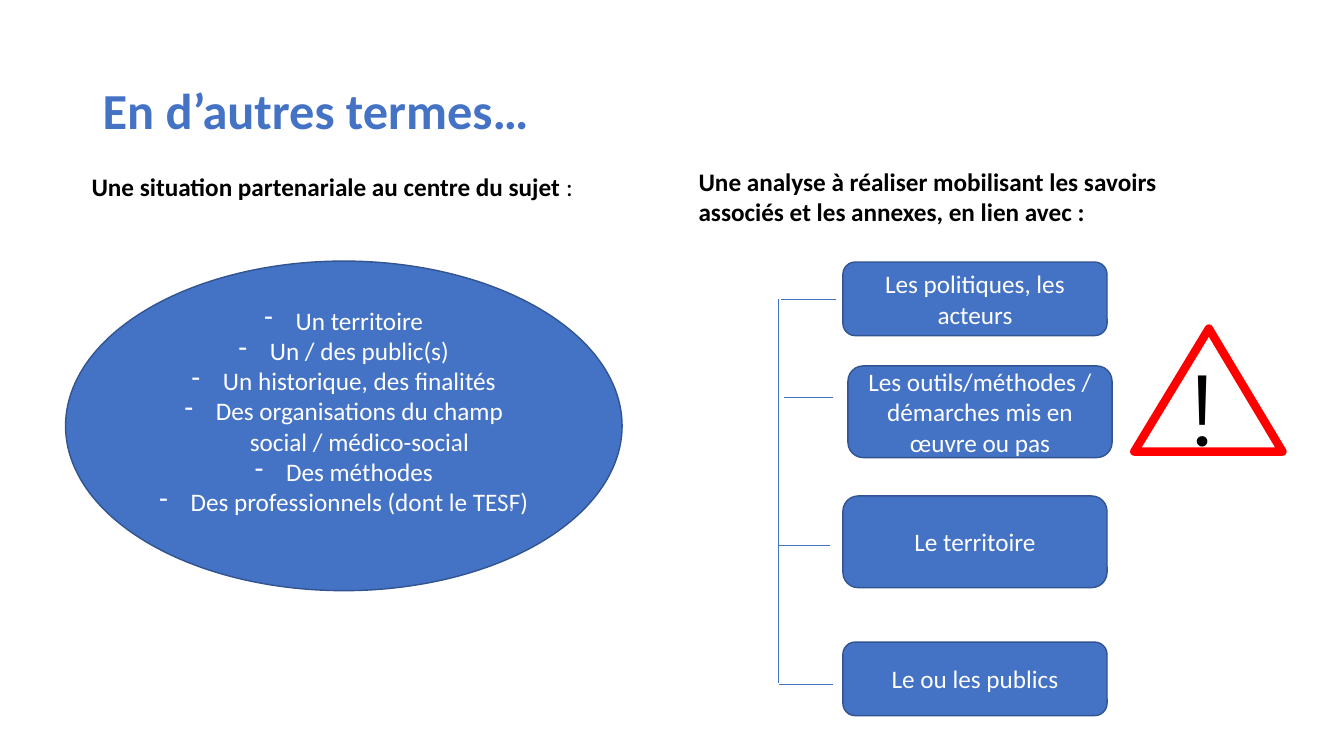
import pptx
import pptx.util
import pptx.dml.color
import pptx.enum.shapes
import pptx.enum.text
import pptx.oxml.ns
from lxml import etree

BLUE, EDGE, WHITE, BLACK, RED = "4472C4", "325491", "FFFFFF", "000000", "FF0000"
TITLE = "En d’autres termes…"
LEFT = [("Une situation partenariale au centre du sujet ", True), (":", False)]
RIGHT = [("Une analyse à réaliser mobilisant les savoirs associés et les annexes, en lien avec :", True)]
ITEMS = [
    "Un territoire",
    "Un / des public(s)",
    "Un historique, des finalités",
    "Des organisations du champ social / médico-social",
    "Des méthodes",
    "Des professionnels (dont le TESF)",
]
BOXES = [
    ("Les politiques, les acteurs", 8.36, 2.6, 0.73),
    ("Les outils/méthodes / démarches mis en œuvre ou pas", 8.41, 3.63, 0.91),
    ("Le territoire", 8.36, 4.92, 0.91),
    ("Le ou les publics", 8.36, 6.37, 0.73),
]
LINES = [
    (8.29, 2.97, 7.75, 2.97),
    (7.72, 2.97, 7.72, 6.78),
    (7.73, 6.79, 8.26, 6.79),
    (7.72, 5.41, 8.23, 5.41),
    (7.78, 3.94, 8.26, 3.94),
    (4.46, 4.37, 5.37, 5.38),
]
SIGN = [(11.25, 4.48), (11.99, 3.26), (12.72, 4.48)]

Inches, Pt = pptx.util.Inches, pptx.util.Pt
KIND = pptx.enum.shapes.MSO_SHAPE
MIDDLE = pptx.enum.text.MSO_ANCHOR.MIDDLE
CENTER = pptx.enum.text.PP_ALIGN.CENTER
qn = pptx.oxml.ns.qn

deck = pptx.Presentation()
deck.slide_width, deck.slide_height = Inches(13.33), Inches(7.5)
slide = deck.slides.add_slide(deck.slide_layouts[6])
shapes = slide.shapes


def color(text):
    return pptx.dml.color.RGBColor.from_string(text)


def style(para, size, tint, bold=None, face="Calibri"):
    font = para.font
    font.name, font.size, font.bold = face, Pt(size), bold
    font.color.rgb = color(tint)


def stroke(line, tint, width):
    line.color.rgb = color(tint)
    line.width = Pt(width)


def label(place):
    frame = shapes.add_textbox(*map(Inches, place)).text_frame
    frame.word_wrap = True
    return frame


def block(kind, place, texts):
    shape = shapes.add_shape(kind, *map(Inches, place))
    shape.shadow.inherit = False
    shape.fill.solid()
    shape.fill.fore_color.rgb = color(BLUE)
    stroke(shape.line, EDGE, 1)
    frame = shape.text_frame
    frame.word_wrap = True
    frame.vertical_anchor = MIDDLE
    frame.text = "\n".join(texts)
    for para in frame.paragraphs:
        para.alignment = CENTER
        style(para, 18, WHITE)
    return frame


def bullet(para):
    props = para._p.get_or_add_pPr()
    props.set("marL", str(Inches(0.31)))
    props.set("indent", str(-Inches(0.31)))
    mark = etree.Element(qn("a:buChar"), char="-")
    props.insert_element_before(mark, "a:tabLst", "a:defRPr", "a:extLst")


head = label((0.92, 0.4, 11.5, 1.45))
head.vertical_anchor = MIDDLE
head.text = TITLE
head.paragraphs[0].line_spacing = 0.9
style(head.paragraphs[0], 36, BLUE, True)

oval = block(KIND.OVAL, (0.65, 2.59, 5.52, 3.27), ITEMS)
oval.margin_bottom = Inches(0.35)
for para in oval.paragraphs:
    bullet(para)

for text, x, y, high in BOXES:
    block(KIND.ROUNDED_RECTANGLE, (x, y, 2.62, high), [text])

for ends in LINES:
    link = shapes.add_connector(pptx.enum.shapes.MSO_CONNECTOR.STRAIGHT, *map(Inches, ends))
    stroke(link.line, BLUE, 0.5)
    etree.SubElement(link._element.spPr, qn("a:effectLst"))

for place, parts in [((6.83, 1.6, 5.59, 0.71), RIGHT), ((0.81, 1.65, 5.37, 0.4), LEFT)]:
    para = label(place).paragraphs[0]
    style(para, 18, BLACK)
    for text, bold in parts:
        run = para.add_run()
        run.text, run.font.bold = text, bold

points = [(Inches(x), Inches(y)) for x, y in SIGN]
path = shapes.build_freeform(*points[0])
path.add_line_segments(points[1:], close=True)
warn = path.convert_to_shape()
warn.shadow.inherit = False
warn.fill.background()
stroke(warn.line, RED, 6)
etree.SubElement(warn.line._get_or_add_ln(), qn("a:round"))

cry = label((11.79, 3.42, 0.51, 1.23))
cry.margin_left = cry.margin_right = cry.margin_bottom = 0
cry.margin_top = Inches(0.01)
cry.text = "!"
para = cry.paragraphs[0]
para.space_before = Pt(1)
para._p.get_or_add_pPr().set("marL", str(Inches(0.01)))
style(para, 72, BLACK, face="Montserrat")

deck.save("out.pptx")
